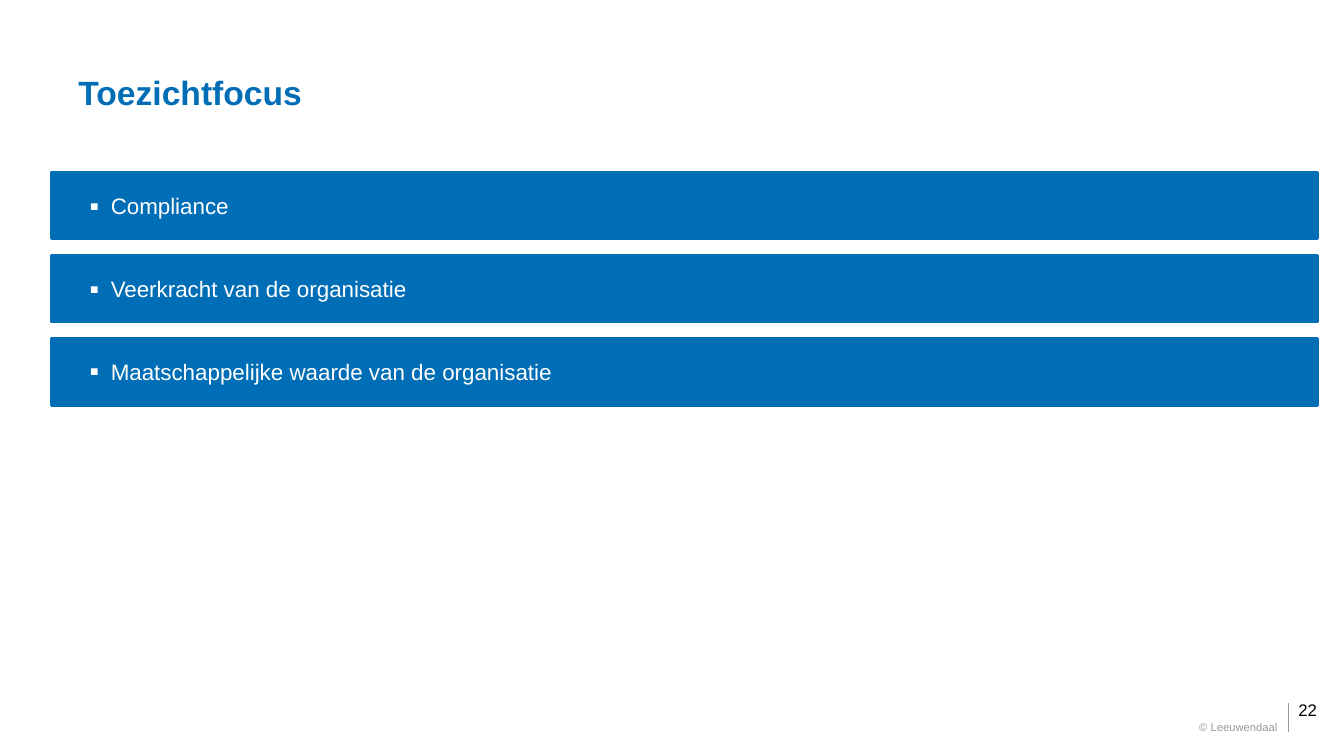
from lxml import etree
from pptx import Presentation
from pptx.dml.color import RGBColor
from pptx.enum.shapes import MSO_CONNECTOR, MSO_SHAPE
from pptx.enum.text import MSO_ANCHOR, PP_ALIGN
from pptx.oxml.ns import qn
from pptx.util import Inches, Pt

BLUE = RGBColor(0x00, 0x6E, 0xB6)
WHITE = RGBColor(0xFF, 0xFF, 0xFF)
GREY = RGBColor(0x99, 0x99, 0x99)
BLACK = RGBColor(0x00, 0x00, 0x00)
RECT = MSO_SHAPE.RECTANGLE
LINE = MSO_CONNECTOR.STRAIGHT
MIDDLE = MSO_ANCHOR.MIDDLE
LEFT, RIGHT = PP_ALIGN.LEFT, PP_ALIGN.RIGHT

deck = Presentation()
deck.slide_width, deck.slide_height = Inches(13.33), Inches(7.5)
slide = deck.slides.add_slide(deck.slide_layouts[6])
shapes = slide.shapes


def place(x, y, w, h):
    """Turn percentages of the slide's width and height into lengths."""
    wide, high = deck.slide_width / 100, deck.slide_height / 100
    return int(x * wide), int(y * high), int(w * wide), int(h * high)


def write(area, lines, size, color, bold=False, align=LEFT, inset=0.05):
    """Add a text box with one paragraph per line and return its frame."""
    frame = shapes.add_textbox(*place(*area)).text_frame
    frame.word_wrap = True
    frame.margin_top = frame.margin_bottom = Inches(inset)
    frame.text = "\n".join(lines)
    for para in frame.paragraphs:
        para.alignment = align
        font = para.font
        font.name, font.size, font.bold = "Arial", Pt(size), bold
        font.color.rgb = color
    return frame


# Bars behind the focus points
points = ["Compliance", "Veerkracht van de organisatie",
          "Maatschappelijke waarde van de organisatie"]
for row in range(len(points)):
    bar = shapes.add_shape(RECT, *place(3.83, 22.8 + 11 * row, 94.22, 8.8))
    bar.shadow.inherit = False
    bar.fill.solid()
    bar.fill.fore_color.rgb = BLUE
    bar.line.color.rgb = BLUE
    bar.line.width = Pt(2)

title = write((5.1, 8.8, 91.67, 6.67), ["Toezichtfocus"], 24, BLUE, bold=True)
title.vertical_anchor = MIDDLE

# Bulleted focus points
body = write((5.93, 24.8, 90, 27.07), points, 16, WHITE)
for row, para in enumerate(body.paragraphs):
    props = para._p.get_or_add_pPr()
    props.set("marL", str(Inches(0.21)))
    props.set("indent", str(-Inches(0.21)))
    tint = etree.Element(qn("a:buClr"))
    etree.SubElement(tint, qn("a:srgbClr"), val=str(WHITE))
    marks = [tint,
             etree.Element(qn("a:buSzPct"), val="120000"),
             etree.Element(qn("a:buFont"), typeface="Arial"),
             etree.Element(qn("a:buChar"), char="▪")]
    for spot, mark in enumerate(marks):
        props.insert(spot, mark)
    if row:
        para.space_before = Pt(40)

# Footer
write((95.87, 92.53, 4.13, 2.67), ["22"], 12, BLACK, inset=0)
x, top, _, high = place(95.87, 92.93, 0, 3.87)
rule = shapes.add_connector(LINE, x, top, x, top + high)
rule.line.color.rgb = GREY
rule.line.width = Pt(0.75)
etree.SubElement(rule._element.spPr, qn("a:effectLst"))
write((83.65, 95.33, 12.15, 1.73), ["© Leeuwendaal"], 8, GREY,
      align=RIGHT, inset=0)

deck.save("out.pptx")
